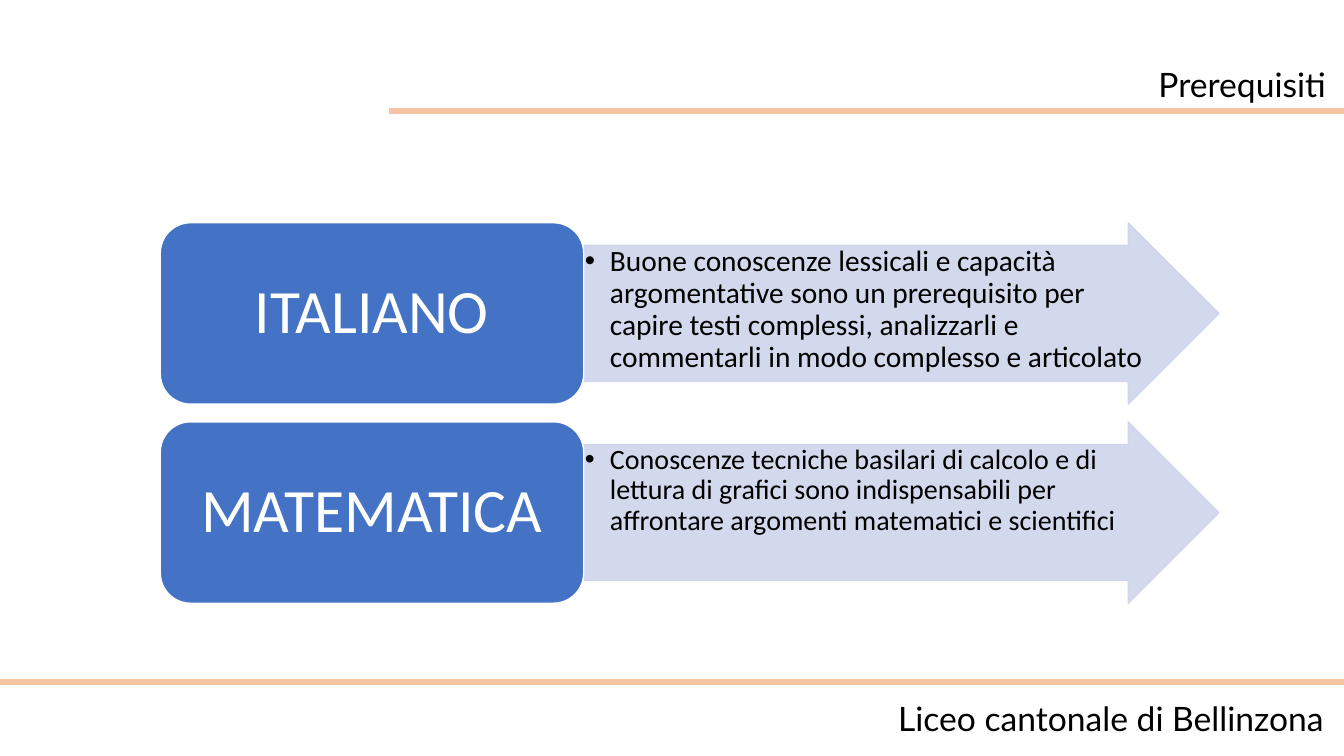
from dataclasses import dataclass

from lxml.etree import SubElement
from pptx import Presentation
from pptx.dml.color import RGBColor
from pptx.enum.shapes import MSO_CONNECTOR, MSO_SHAPE
from pptx.enum.text import MSO_ANCHOR, MSO_AUTO_SIZE, PP_ALIGN
from pptx.oxml.ns import qn
from pptx.util import Inches, Pt


@dataclass(frozen=True)
class Theme:
    rule: RGBColor = RGBColor(0xF6, 0xC4, 0xA2)
    arrow: RGBColor = RGBColor(0xCF, 0xD5, 0xEA)
    block: RGBColor = RGBColor(0x44, 0x72, 0xC4)
    light: RGBColor = RGBColor(0xFF, 0xFF, 0xFF)
    dark: RGBColor = RGBColor(0x00, 0x00, 0x00)
    heading_font: str = "Lato"
    body_font: str = "Calibri"
    heading_size: int = 24
    block_size: int = 44
    rule_width: float = 4.25


@dataclass(frozen=True)
class Subject:
    name: str
    requirement: str
    requirement_size: int


@dataclass(frozen=True)
class Rule:
    left: float
    top: float


THEME = Theme()
SLIDE_WIDTH, SLIDE_HEIGHT = 13.33, 7.5
BLOCK_LEFT, BLOCK_WIDTH = 1.59, 4.2
ARROW_LEFT, ARROW_WIDTH = BLOCK_LEFT + BLOCK_WIDTH, 6.3
ROW_TOP, ROW_HEIGHT, ROW_PITCH = 2.21, 1.8, 1.975

SUBJECTS = [
    Subject("ITALIANO",
            "Buone conoscenze lessicali e capacità argomentative sono un prerequisito "
            "per capire testi complessi, analizzarli e commentarli in modo complesso "
            "e articolato", 21),
    Subject("MATEMATICA",
            "Conoscenze tecniche basilari di calcolo e di lettura di grafici sono "
            "indispensabili per affrontare argomenti matematici e scientifici", 20),
]
RULES = [Rule(3.86, 1.1), Rule(0, 6.77)]


def place(shape, left: float, top: float, width: float, height: float) -> None:
    shape.left, shape.top = Inches(left), Inches(top)
    shape.width, shape.height = Inches(width), Inches(height)


def write_text(shape, text: str, *, size: float, font: str = THEME.body_font,
               color: RGBColor = THEME.dark, align=PP_ALIGN.LEFT,
               anchor=MSO_ANCHOR.TOP, margins: tuple[float, float] = (0.1, 0.05),
               bullet: bool = False) -> None:
    frame = shape.text_frame
    frame.word_wrap = True
    frame.auto_size = MSO_AUTO_SIZE.NONE
    frame.vertical_anchor = anchor
    frame.margin_left = frame.margin_right = Inches(margins[0])
    frame.margin_top = frame.margin_bottom = Inches(margins[1])
    paragraph = frame.paragraphs[0]
    if bullet:
        properties = paragraph._p.get_or_add_pPr()
        properties.set("marL", str(Inches(0.25)))
        properties.set("indent", str(Inches(-0.25)))
        SubElement(properties, qn("a:buChar")).set("char", "•")
    paragraph.alignment = align
    paragraph.line_spacing = 0.9
    paragraph.space_before = Pt(0)
    run = paragraph.add_run()
    run.text = text
    run.font.name = font
    run.font.size = Pt(size)
    run.font.color.rgb = color


def add_rule(slide, rule: Rule) -> None:
    line = slide.shapes.add_connector(
        MSO_CONNECTOR.STRAIGHT, Inches(rule.left), Inches(rule.top),
        Inches(SLIDE_WIDTH), Inches(rule.top))
    line.line.color.rgb = THEME.rule
    line.line.width = Pt(THEME.rule_width)
    SubElement(line.element.spPr, qn("a:effectLst"))


def add_panel(slide, kind: MSO_SHAPE, left: float, top: float, width: float,
              fill: RGBColor, outline: RGBColor):
    shape = slide.shapes.add_shape(
        kind, Inches(left), Inches(top), Inches(width), Inches(ROW_HEIGHT))
    shape.shadow.inherit = False
    shape.fill.solid()
    shape.fill.fore_color.rgb = fill
    shape.line.color.rgb = outline
    shape.line.width = Pt(1)
    return shape


def add_subject(slide, subject: Subject, body, top: float) -> None:
    # Arrow with its requirement
    arrow = add_panel(slide, MSO_SHAPE.RIGHT_ARROW, ARROW_LEFT, top, ARROW_WIDTH,
                      THEME.arrow, THEME.arrow)
    arrow.adjustments[0], arrow.adjustments[1] = 0.75, 0.5
    for color in arrow.element.spPr.iter(qn("a:srgbClr")):
        SubElement(color, qn("a:alpha")).set("val", "90000")
    place(body, ARROW_LEFT, top + ROW_HEIGHT / 8, 5.63, ROW_HEIGHT * 0.75)
    write_text(body, subject.requirement, size=subject.requirement_size,
               margins=(0.01, 0.01), bullet=True)
    arrow.element.addnext(body.element)  # the list lies above its arrow

    # Block with the subject name
    block = add_panel(slide, MSO_SHAPE.ROUNDED_RECTANGLE, BLOCK_LEFT, top,
                      BLOCK_WIDTH, THEME.block, THEME.light)
    write_text(block, subject.name, size=THEME.block_size, color=THEME.light,
               align=PP_ALIGN.CENTER, anchor=MSO_ANCHOR.MIDDLE)


def main() -> None:
    presentation = Presentation()
    presentation.slide_width = Inches(SLIDE_WIDTH)
    presentation.slide_height = Inches(SLIDE_HEIGHT)
    slide = presentation.slides.add_slide(
        presentation.slide_layouts.get_by_name("Two Content"))
    title, *bodies = slide.placeholders

    # Heading, footer and rules
    for rule in RULES:
        add_rule(slide, rule)
    place(title, 4.21, 0.38, 9.04, 0.71)
    write_text(title, "Prerequisiti", size=THEME.heading_size,
               font=THEME.heading_font, align=PP_ALIGN.RIGHT,
               anchor=MSO_ANCHOR.BOTTOM)
    footer = slide.shapes.add_textbox(
        Inches(8.81), Inches(6.67), Inches(4.5), Inches(0.71))
    write_text(footer, "Liceo cantonale di Bellinzona", size=THEME.heading_size,
               font=THEME.heading_font, anchor=MSO_ANCHOR.BOTTOM)

    # Subject rows
    for row, (subject, body) in enumerate(zip(SUBJECTS, bodies)):
        add_subject(slide, subject, body, ROW_TOP + row * ROW_PITCH)

    presentation.save("out.pptx")


if __name__ == "__main__":
    main()
